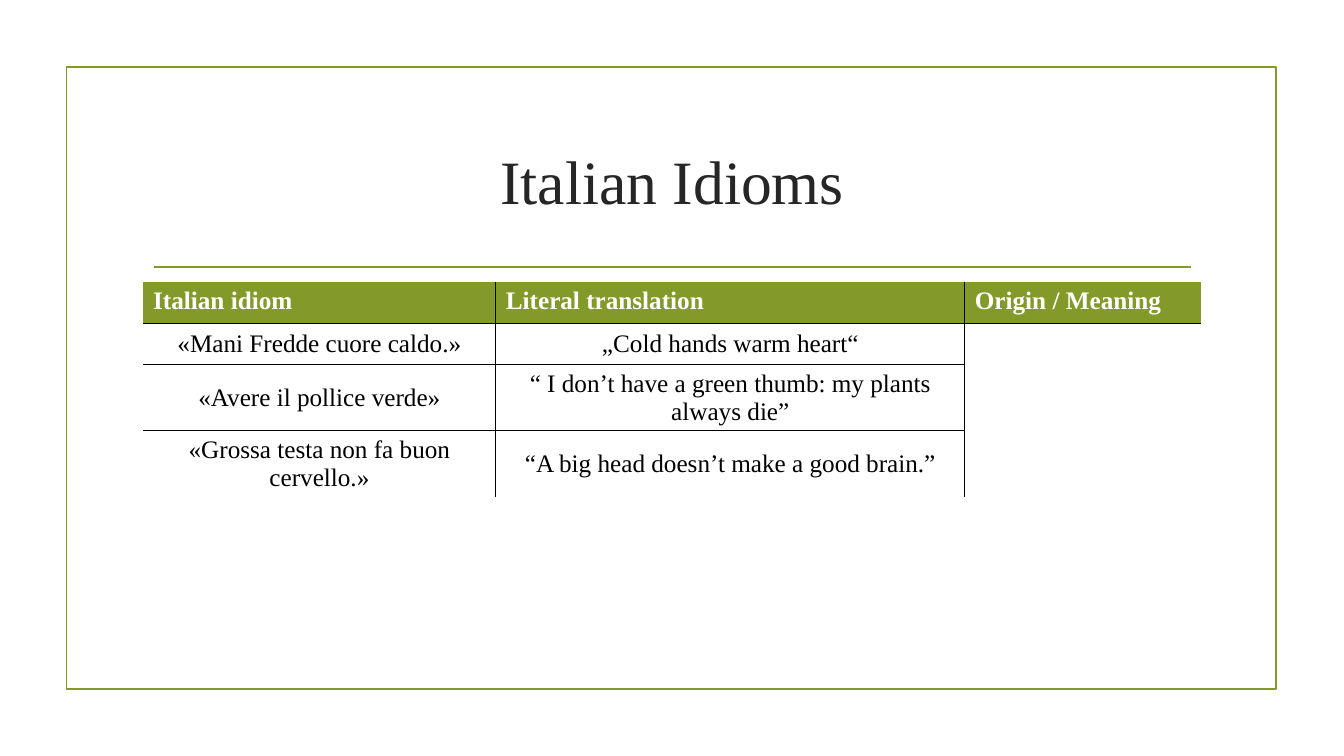
from lxml import etree
from pptx import Presentation
from pptx.dml.color import RGBColor
from pptx.enum import shapes, text
from pptx.oxml import ns
from pptx.util import Pt

COLORS = {"olive": "83992A", "title": "262626", "black": "000000", "white": "FFFFFF"}
FONT = "Times New Roman"
TITLE_ONLY = 5
LEFT, WIDTH = 102.2, 756
COLUMN_WIDTHS = (252, 335, 169)
ROW_HEIGHT = 29.5
HEADINGS = ("Italian idiom", "Literal translation", "Origin / Meaning")
IDIOMS = (
    ("«Mani Fredde cuore caldo.»", "„Cold hands warm heart“"),
    ("«Avere il pollice verde»", "“ I don’t have a green thumb: my plants always die”"),
    ("«Grossa testa non fa buon cervello.»", "“A big head doesn’t make a good brain.”"),
)


def rgb(name):
    return RGBColor.from_string(COLORS[name])


def add_run(paragraph, words, size, color, bold=False):
    run = paragraph.add_run()
    run.text = words
    run.font.name = FONT
    run.font.size = Pt(size)
    run.font.bold = bold
    run.font.color.rgb = rgb(color)


def add_frame(slide):
    frame = slide.shapes.add_shape(
        shapes.MSO_SHAPE.RECTANGLE, Pt(47.6), Pt(48), Pt(864), Pt(444.4))
    frame.shadow.inherit = False
    frame.fill.background()
    frame.line.color.rgb = rgb("olive")
    frame.line.width = Pt(1.25)


def add_divider(slide):
    divider = slide.shapes.add_connector(
        shapes.MSO_CONNECTOR.STRAIGHT, Pt(110), Pt(190.8), Pt(850.5), Pt(190.8))
    divider.line.color.rgb = rgb("olive")
    divider.line.width = Pt(1.25)
    etree.SubElement(divider.element.spPr, ns.qn("a:effectLst"))


def set_title(slide, words):
    title = slide.shapes.title
    title.left, title.top, title.width, title.height = (
        Pt(LEFT), Pt(77), Pt(WIDTH), Pt(103))
    title.text_frame.vertical_anchor = text.MSO_ANCHOR.MIDDLE
    paragraph = title.text_frame.paragraphs[0]
    paragraph.alignment = text.PP_ALIGN.CENTER
    add_run(paragraph, words, 44, "title")


def set_borders(cell, visible):
    """Draw a black border on each side in visible and clear the others."""
    properties = cell._tc.get_or_add_tcPr()
    for side in "LRTB":
        border = etree.SubElement(properties, ns.qn(f"a:ln{side}"), w=str(Pt(1)))
        if side in visible:
            fill = etree.SubElement(border, ns.qn("a:solidFill"))
            etree.SubElement(fill, ns.qn("a:srgbClr"), val=COLORS["black"])
        else:
            etree.SubElement(border, ns.qn("a:noFill"))


def inner_sides(row, column):
    sides = {
        "L": column > 0,
        "R": column < len(HEADINGS) - 1,
        "T": row > 0,
        "B": row < len(IDIOMS),
    }
    if column == len(HEADINGS) - 1 and row > 0:
        sides.update(T=row == 1, B=False)
    return [side for side, inside in sides.items() if inside]


def add_idiom_table(slide):
    row_count = len(IDIOMS) + 1
    holder = slide.shapes.add_table(
        row_count, len(HEADINGS), Pt(LEFT), Pt(201.6), Pt(WIDTH), Pt(159))
    table = holder.table
    for column, width in zip(table.columns, COLUMN_WIDTHS):
        column.width = Pt(width)
    for row in table.rows:
        row.height = Pt(ROW_HEIGHT)

    for row in range(row_count):
        for column in range(len(HEADINGS)):
            cell = table.cell(row, column)
            set_borders(cell, inner_sides(row, column))
            if row == 0:
                cell.fill.solid()
                cell.fill.fore_color.rgb = rgb("olive")
            else:
                cell.fill.background()

    for heading, cell in zip(HEADINGS, table.rows[0].cells):
        add_run(cell.text_frame.paragraphs[0], heading, 18, "white", bold=True)
    for row, phrases in enumerate(IDIOMS, start=1):
        for column, phrase in enumerate(phrases):
            cell = table.cell(row, column)
            cell.vertical_anchor = text.MSO_ANCHOR.MIDDLE
            paragraph = cell.text_frame.paragraphs[0]
            paragraph.alignment = text.PP_ALIGN.CENTER
            add_run(paragraph, phrase, 18, "black")
    table.cell(1, 2).merge(table.cell(row_count - 1, 2))


def main():
    presentation = Presentation()
    presentation.slide_width, presentation.slide_height = Pt(960), Pt(540)
    slide = presentation.slides.add_slide(presentation.slide_layouts[TITLE_ONLY])
    add_frame(slide)
    add_divider(slide)
    set_title(slide, "Italian Idioms")
    add_idiom_table(slide)
    presentation.save("out.pptx")


if __name__ == "__main__":
    main()
